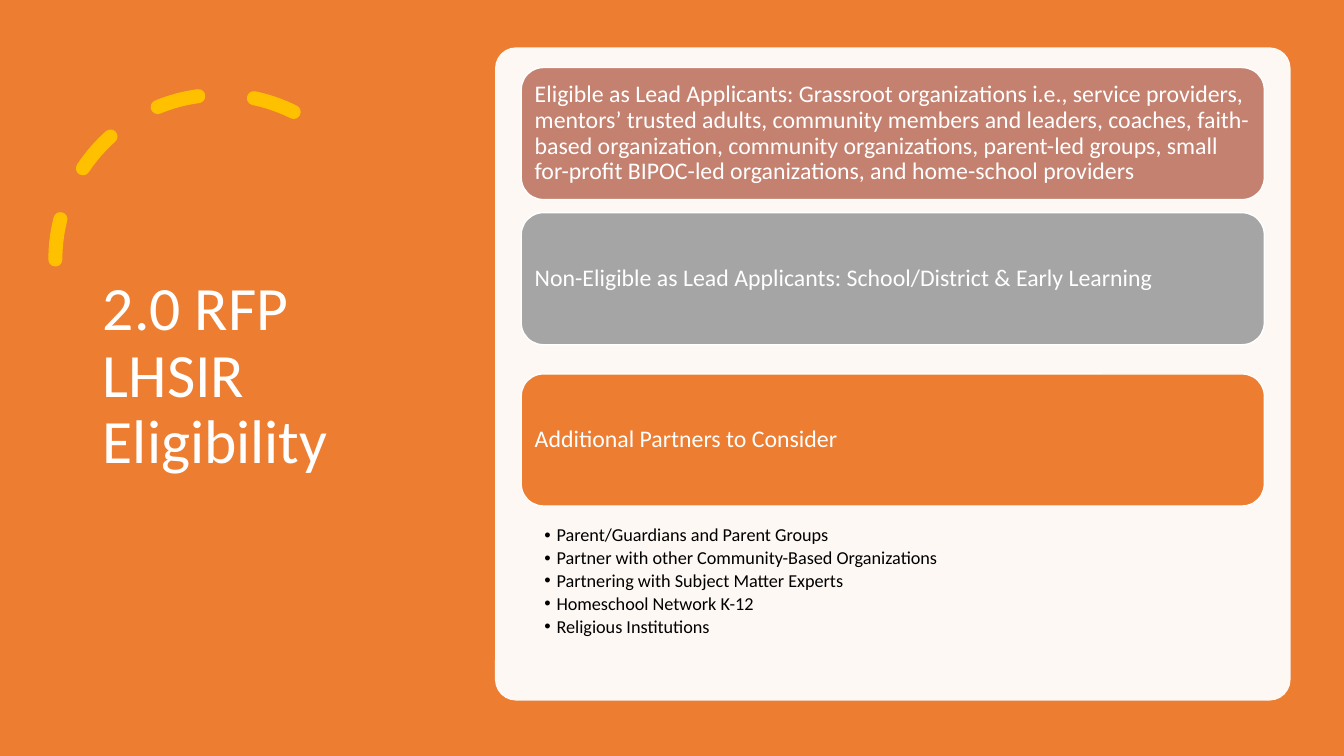
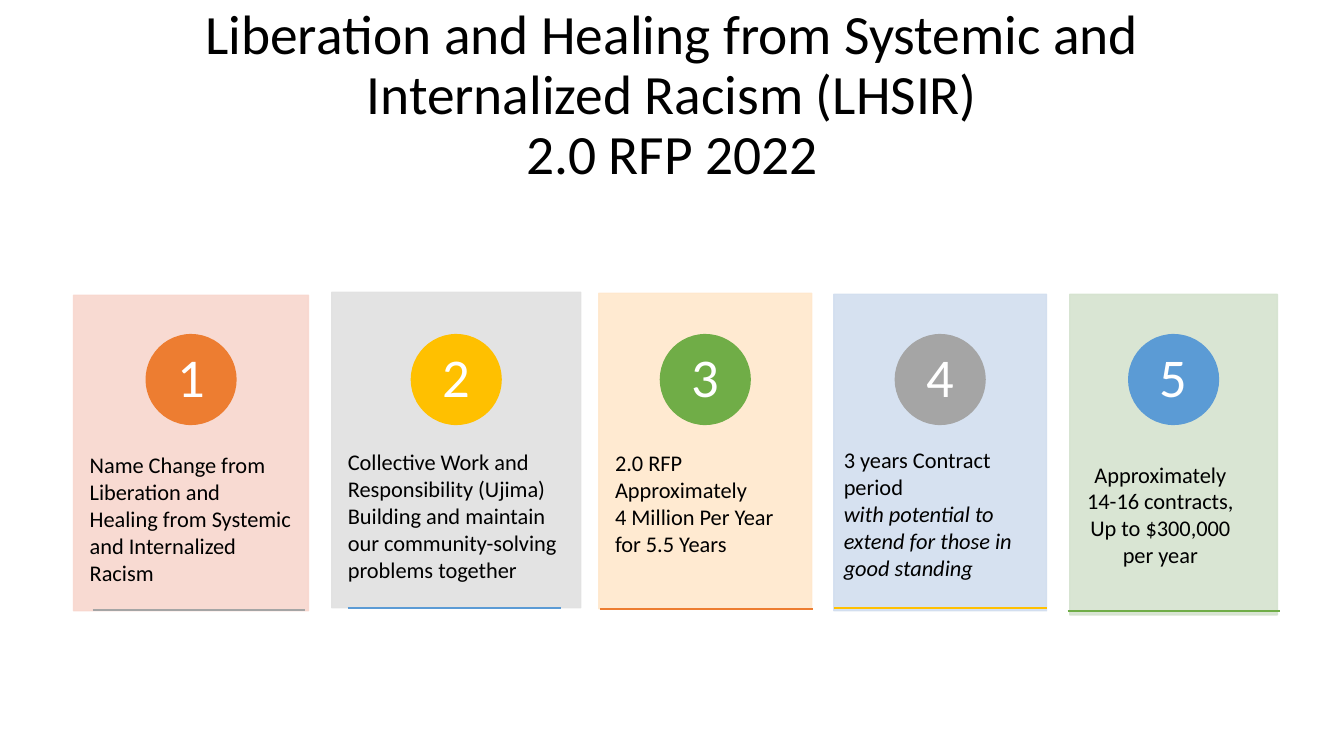
from dataclasses import dataclass

from pptx import Presentation, util as u
from pptx.dml.color import RGBColor
from pptx.enum import shapes, text
from pptx.oxml.ns import qn
from lxml import etree

Inches, Pt = u.Inches, u.Pt

# Shared look
FONT = "Calibri"
WHITE, BLACK = "FFFFFF", "000000"
ORANGE, GOLD, GRAY, GREEN, BLUE = "ED7D31", "FFC000", "A5A5A5", "70AD47", "5B9BD5"
ROSE = "C48170"
TITLE_ONLY, TITLE_AND_BODY = 5, 1
LEFT, CENTER = text.PP_ALIGN.LEFT, text.PP_ALIGN.CENTER
TOP, MIDDLE = text.MSO_ANCHOR.TOP, text.MSO_ANCHOR.MIDDLE


# Helpers
def paint(color_holder, hex_color, alpha=None):
    """Give a fill a solid colour, with opacity in percent if wanted."""
    color_holder.solid()
    color_holder.fore_color.rgb = RGBColor.from_string(hex_color)
    if alpha is not None:
        solid = color_holder._xPr.find(qn("a:solidFill"))
        etree.SubElement(solid[0], qn("a:alpha"), val=str(alpha * 1000))


def place(item, box):
    item.left, item.top, item.width, item.height = map(Inches, box)


def write(item, lines, size, color, align=LEFT, anchor=MIDDLE,
          insets=(0.1, 0.05, 0.1, 0.05), spacing=None, after=0):
    frame = item.text_frame
    frame.word_wrap = True
    frame.auto_size = text.MSO_AUTO_SIZE.NONE
    frame.vertical_anchor = anchor
    (frame.margin_left, frame.margin_top,
     frame.margin_right, frame.margin_bottom) = map(Inches, insets)
    frame.text = "\n".join(lines)
    for paragraph in frame.paragraphs:
        paragraph.alignment = align
        paragraph.line_spacing = spacing
        paragraph.space_before, paragraph.space_after = Pt(0), Pt(after)
        font = paragraph.font
        font.name, font.size = FONT, Pt(size)
        font.color.rgb = RGBColor.from_string(color)
    return frame.paragraphs


def add_block(slide, kind, box, fill, line=None, alpha=None):
    block = slide.shapes.add_shape(kind, *map(Inches, box))
    block.shadow.inherit = False
    paint(block.fill, fill, alpha)
    if line:
        paint(block.line.fill, line, alpha)
        block.line.width = Pt(1)
    else:
        block.line.fill.background()
    return block


def add_rule(slide, left, top, width, color):
    rule = slide.shapes.add_connector(
        shapes.MSO_CONNECTOR.STRAIGHT,
        Inches(left), Inches(top), Inches(left + width), Inches(top))
    paint(rule.line.fill, color)
    rule.line.width = Pt(1)
    etree.SubElement(rule._element.spPr, qn("a:effectLst"))


def add_dashed_arc(slide, box):
    arc = slide.shapes.add_shape(shapes.MSO_SHAPE.ARC, *map(Inches, box))
    arc.shadow.inherit = False
    arc.adjustments[0], arc.adjustments[1] = 146.13, 0
    arc.fill.background()
    paint(arc.line.fill, GOLD)
    arc.line.width = Pt(10)
    arc.line.dash_style = 4  # MSO_LINE.DASH
    arc.line._ln.set("cap", "rnd")
    arc._element.spPr.find(qn("a:xfrm")).set("flipH", "1")


def add_bullets(slide, items, box):
    partners = slide.placeholders[1]
    place(partners, box)
    for paragraph in write(partners, items, 13, BLACK, anchor=TOP, spacing=0.9,
                           insets=(0.23, 0.02, 0.13, 0.02), after=2.3):
        props = paragraph._p.get_or_add_pPr()
        props.set("marL", str(Inches(0.12)))
        props.set("indent", str(-Inches(0.12)))
    # Bring the list in front of the panel
    slide.shapes._spTree.append(partners._element)


def new_slide(deck, layout, title, box, size, color, align=LEFT):
    slide = deck.slides.add_slide(deck.slide_layouts[layout])
    place(slide.shapes.title, box)
    write(slide.shapes.title, [title], size, color, align, spacing=0.9)
    return slide


# Slide 1: eligibility
def build_eligibility(deck):
    slide = new_slide(deck, TITLE_AND_BODY, "2.0 RFP LHSIR Eligibility",
                      (0.92, 0.7, 3.23, 6.09), 44, WHITE)
    paint(slide.background.fill, ORANGE)
    add_dashed_arc(slide, (0.55, 0.94, 3.27, 3.27))
    rounded = shapes.MSO_SHAPE.ROUNDED_RECTANGLE
    panel = add_block(slide, rounded, (4.91, 0.47, 7.89, 6.48), WHITE, alpha=95)
    panel.adjustments[0] = 0.032

    groups = [
        (0.67, ROSE, "Eligible as Lead Applicants: Grassroot organizations i.e., "
         "service providers, mentors’ trusted adults, community members and leaders, "
         "coaches, faith-based organization, community organizations, parent-led "
         "groups, small for-profit BIPOC-led organizations, and home-school providers"),
        (2.11, GRAY, "Non-Eligible as Lead Applicants: School/District & Early Learning"),
        (3.71, ORANGE, "Additional Partners to Consider"),
    ]
    for top, fill, wording in groups:
        bar = add_block(slide, rounded, (5.17, top, 7.37, 1.31), fill, WHITE)
        write(bar, [wording], 17, WHITE, insets=(0.07,) * 4, spacing=0.9)

    add_bullets(slide, [
        "Parent/Guardians and Parent Groups",
        "Partner with other Community-Based Organizations",
        "Partnering with Subject Matter Experts",
        "Homeschool Network K-12",
        "Religious Institutions",
    ], (5.17, 5.2, 7.37, 1.23))


# Slide 2: five numbered cards
@dataclass
class Card:
    box: tuple
    tint: str
    accent: str
    rule_color: str
    rule_at: tuple
    lines: list
    insets: tuple = (0.16, 1.55, 0.16, 0)
    align: int = LEFT
    italic_from: int = 99


CARDS = [
    Card((0.73, 2.93, 2.33, 3.13), "F8D7CE", ORANGE, GRAY, (0.92, 6.05),
         ["Name Change from Liberation and Healing from Systemic and "
          "Internalized Racism"]),
    Card((3.29, 2.9, 2.47, 3.13), "E1E1E1", GOLD, BLUE, (3.45, 6.03),
         ["Collective Work and Responsibility (Ujima)",
          "Building and maintain our community-solving problems together"]),
    Card((5.94, 2.91, 2.11, 3.13), "FFE8CC", GREEN, ORANGE, (5.95, 6.04),
         ["2.0 RFP", "Approximately", "4 Million Per Year", "for 5.5 Years"]),
    Card((8.27, 2.92, 2.11, 3.14), "D2DEEF", GRAY, GOLD, (8.27, 6.03),
         ["3 years Contract period",
          "with potential to extend for those in good standing"],
         insets=(0.1, 1.51, 0.3, 0), italic_from=1),
    Card((10.61, 2.92, 2.06, 3.18), "D5E3CF", BLUE, GREEN, (10.59, 6.06),
         ["Approximately", "14-16 contracts,", "Up to $300,000 per year"],
         insets=(0.1, 1.65, 0.36, 0), align=CENTER),
]


def add_card(slide, number, card):
    left, _, width, _ = card.box
    panel = add_block(slide, shapes.MSO_SHAPE.RECTANGLE, card.box,
                      card.tint, card.tint, alpha=90)
    paragraphs = write(panel, card.lines, 16, BLACK, card.align, TOP, card.insets)
    for paragraph in paragraphs[card.italic_from:]:
        paragraph.font.italic = True

    diameter = 0.89
    badge = add_block(slide, shapes.MSO_SHAPE.OVAL,
                      (left + (width - diameter) / 2, 3.32, diameter, diameter),
                      card.accent, card.accent)
    write(badge, [str(number)], 39, WHITE, CENTER,
          insets=(0.07, 0.01, 0.07, 0.01), spacing=0.9)
    add_rule(slide, *card.rule_at, 2.11, card.rule_color)


def build_overview(deck):
    slide = new_slide(deck, TITLE_ONLY,
                      "Liberation and Healing from Systemic and Internalized "
                      "Racism (LHSIR)\v2.0 RFP 2022",
                      (0.92, 0.37, 11.49, 1.18), 39.6, BLACK, CENTER)
    for number, card in enumerate(CARDS, 1):
        add_card(slide, number, card)


def main():
    deck = Presentation()
    deck.slide_width, deck.slide_height = Inches(13.33), Inches(7.5)
    build_eligibility(deck)
    build_overview(deck)
    deck.save("out.pptx")


if __name__ == "__main__":
    main()
